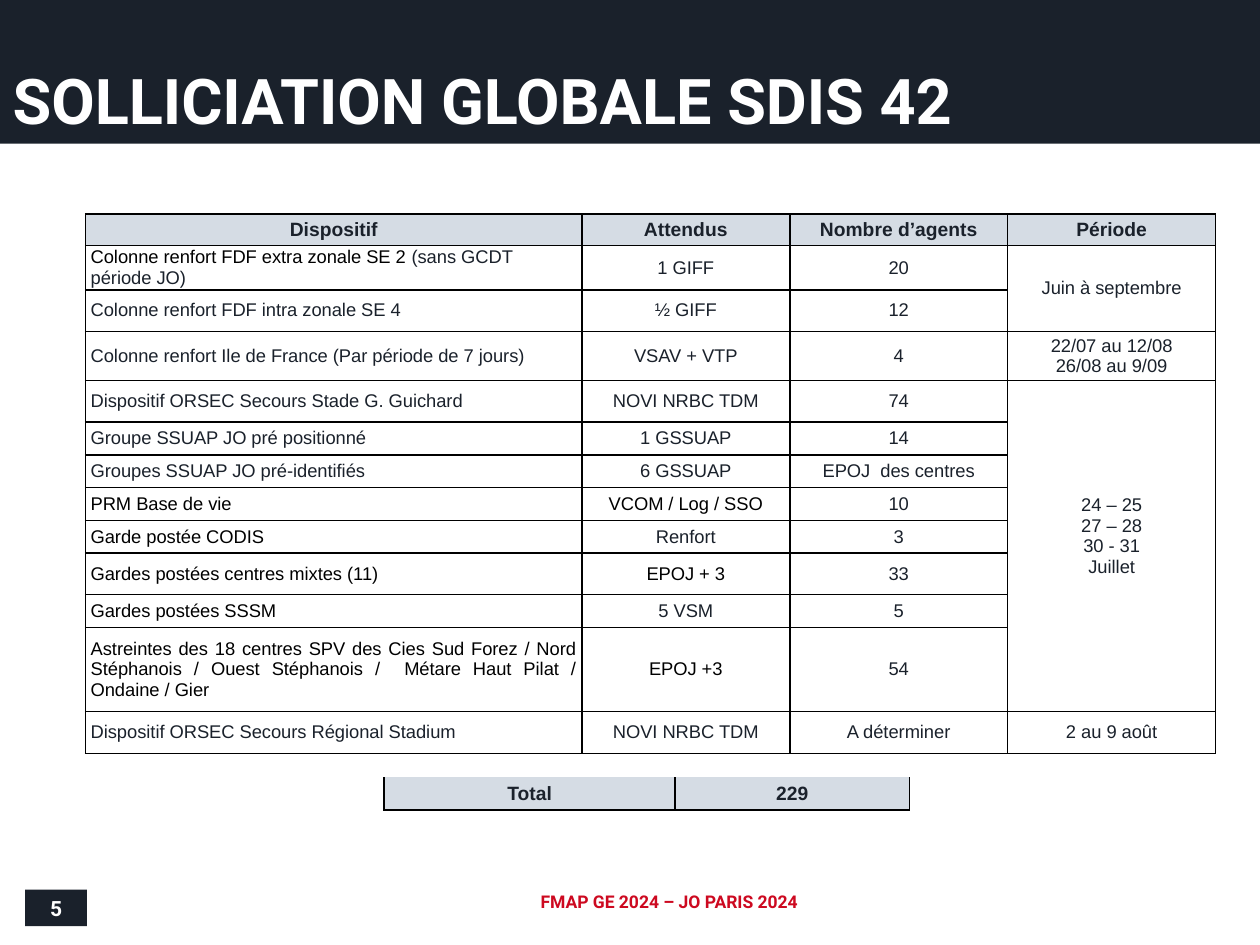
from lxml import etree
from pptx import Presentation, util as u
from pptx.dml.color import RGBColor
from pptx.enum import shapes, text
from pptx.oxml.ns import qn

Inches, Pt = u.Inches, u.Pt
COLORS = {"navy": "1A212B", "black": "000000", "white": "FFFFFF",
          "red": "CD0920", "header": "D5DCE4"}
ALIGN = text.PP_ALIGN
ANCHOR = text.MSO_ANCHOR


def add_run(paragraph, words, size, color="navy", bold=False, font="Arial"):
    run = paragraph.add_run()
    run.text = words
    run.font.size, run.font.bold, run.font.name = Pt(size), bold, font
    run.font.color.rgb = RGBColor.from_string(COLORS[color])


def border(cell, sides):
    """Draw 1 pt black lines on the sides, listed in the order L, R, T, B."""
    properties = cell._tc.get_or_add_tcPr()
    for side in sides:
        line = etree.SubElement(properties, qn(f"a:ln{side}"), w=str(Pt(1)))
        fill = etree.SubElement(line, qn("a:solidFill"))
        etree.SubElement(fill, qn("a:srgbClr"), val=COLORS["black"])


prs = Presentation()
prs.slide_width, prs.slide_height = Inches(10), Inches(7.5)
slide = prs.slides.add_slide(prs.slide_layouts[5])

# Title band
title = slide.shapes.title
title.left, title.top = Inches(0), Inches(0)
title.width, title.height = Inches(10), Inches(1.14)
title.fill.solid()
title.fill.fore_color.rgb = RGBColor.from_string(COLORS["navy"])
title.text_frame.auto_size = text.MSO_AUTO_SIZE.NONE
title.text_frame.vertical_anchor = ANCHOR.BOTTOM
heading = title.text_frame.paragraphs[0]
heading.alignment = ALIGN.LEFT
add_run(heading, "SOLLICIATION GLOBALE SDIS 42", 36, "white", True, "Roboto")

# Footer and page number
footer = slide.shapes.add_textbox(Inches(2.95), Inches(7.06), Inches(4.72), Inches(0.29))
footer.text_frame.word_wrap = True
footer.text_frame.margin_top = footer.text_frame.margin_bottom = Inches(0.04)
footer_line = footer.text_frame.paragraphs[0]
footer_line.alignment = ALIGN.CENTER
footer_line.line_spacing = 0.8
add_run(footer_line, "FMAP GE 2024 – JO PARIS 2024", 10, "red", True, "Roboto")

page = slide.shapes.add_shape(shapes.MSO_SHAPE.RECTANGLE, Inches(0.2), Inches(7.06),
                              Inches(0.49), Inches(0.29))
page.shadow.inherit = False
page.fill.solid()
page.fill.fore_color.rgb = RGBColor.from_string(COLORS["navy"])
page.line.fill.background()
page.text_frame.vertical_anchor = ANCHOR.MIDDLE
page.text_frame.paragraphs[0].alignment = ALIGN.CENTER
add_run(page.text_frame.paragraphs[0], "5", 12, "white", True, "Roboto")

# Table: the three first headings span several grid columns
headings = ["Dispositif", "Attendus", "Nombre d’agents", "Période"]
resources = [
    ("Colonne renfort FDF extra zonale SE 2 ", "1 GIFF", "20"),
    ("Colonne renfort FDF intra zonale SE 4", "½ GIFF", "12"),
    ("Colonne renfort Ile de France (Par période de 7 jours)", "VSAV + VTP", "4"),
    ("Dispositif ORSEC Secours Stade G. Guichard", "NOVI NRBC TDM", "74"),
    ("Groupe SSUAP JO pré positionné", "1 GSSUAP", "14"),
    ("Groupes SSUAP JO pré-identifiés", "6 GSSUAP", "EPOJ  des centres"),
    ("PRM Base de vie", "VCOM / Log / SSO", "10"),
    ("Garde postée CODIS", "Renfort", "3"),
    ("Gardes postées centres mixtes (11)", "EPOJ + 3", "33"),
    ("Gardes postées SSSM", "5 VSM", "5"),
    ("Astreintes des 18 centres SPV des Cies Sud Forez / Nord Stéphanois / "
     "Ouest Stéphanois /  Métare Haut Pilat / Ondaine / Gier", "EPOJ +3", "54"),
    ("Dispositif ORSEC Secours Régional Stadium", "NOVI NRBC TDM", "A déterminer"),
]
black_cells = {(row, 0) for row in (1, 7, 8, 9, 10, 11)} | {(7, 3), (9, 3), (11, 3)}
periods = [  # first row, last row, lines
    (1, 2, ["Juin à septembre"]),
    (3, 3, ["22/07 au 12/08", "26/08 au 9/09"]),
    (4, 11, ["24 – 25", "27 – 28", "30 - 31", "Juillet"]),
    (12, 12, ["2 au 9 août"]),
]
spans = [(0, 2), (3, 4), (5, 6), (7, 7)]
total_spans = [(0, 1), (2, 3), (4, 5), (6, 7)]
GAP_ROW, TOTAL_ROW = 13, 14
widths = [2.25, 0.11, 1.57, 0.74, 0.91, 0.95, 0.78, 1.65]
heights = [0.25, 0.33, 0.33, 0.39, 0.33, 0.26, 0.26, 0.26, 0.26, 0.33, 0.26, 0.67,
           0.33, 0.19, 0.26]

table = slide.shapes.add_table(len(heights), len(widths), Inches(0.68), Inches(1.7),
                               Inches(sum(widths)), Inches(sum(heights))).table
table.first_row = table.horz_banding = False
style = table._tbl.tblPr.find(qn("a:tableStyleId"))
style.text = "{2D5ABB26-0587-4C30-8999-92F81FD0307C}"  # no style, no grid
for column, width in zip(table.columns, widths):
    column.width = Inches(width)
for row, height in zip(table.rows, heights):
    row.height = Inches(height)

# Lines, fills and margins of every grid cell
for r in range(len(heights)):
    for c in range(len(widths)):
        cell = table.cell(r, c)
        cell.margin_left = cell.margin_right = Inches(0.04)
        cell.margin_top = cell.margin_bottom = 0
        cell.vertical_anchor = ANCHOR.MIDDLE
        in_total = r == TOTAL_ROW and 2 <= c <= 5
        if r < GAP_ROW:
            border(cell, "LRTB")
        elif in_total:
            border(cell, "LRB")
        if r == 0 or in_total:
            cell.fill.solid()
            cell.fill.fore_color.rgb = RGBColor.from_string(COLORS["header"])
        else:
            cell.fill.background()

# Merged areas
for r in range(GAP_ROW):
    for first, last in spans[:3]:
        table.cell(r, first).merge(table.cell(r, last))
for first, last, _ in periods:
    if last > first:
        table.cell(first, 7).merge(table.cell(last, 7))
table.cell(GAP_ROW, 1).merge(table.cell(GAP_ROW, 7))
for first, last in total_spans:
    table.cell(TOTAL_ROW, first).merge(table.cell(TOTAL_ROW, last))

# Wording: (row, column, lines)
contents = [(0, first, [words]) for (first, _), words in zip(spans, headings)]
for r, resource in enumerate(resources, start=1):
    contents += [(r, first, [words]) for (first, _), words in zip(spans, resource)]
contents += [(first, 7, lines) for first, _, lines in periods]
contents += [(TOTAL_ROW, 2, ["Total"]), (TOTAL_ROW, 4, ["229"])]
for r, c, lines in contents:
    frame = table.cell(r, c).text_frame
    bold = r in (0, TOTAL_ROW)
    for i, words in enumerate(lines):
        paragraph = frame.add_paragraph() if i else frame.paragraphs[0]
        paragraph.alignment = ALIGN.CENTER if c or bold else ALIGN.LEFT
        add_run(paragraph, words, 11 if bold else 10.5,
                "black" if (r, c) in black_cells else "navy", bold)
add_run(table.cell(1, 0).text_frame.paragraphs[0], "(sans GCDT période JO)", 10.5)
table.cell(11, 0).text_frame.paragraphs[0].alignment = ALIGN.JUSTIFY
table.cell(4, 7).margin_bottom = Inches(0.16)

# Small type in the empty cells keeps their rows low
filled = {(r, c) for r, c, _ in contents}
for r in range(len(heights)):
    for c in range(len(widths)):
        if (r, c) not in filled:
            empty = table.cell(r, c).text_frame.paragraphs[0]
            etree.SubElement(empty._p, qn("a:endParaRPr"), sz="800")

prs.save("out.pptx")
